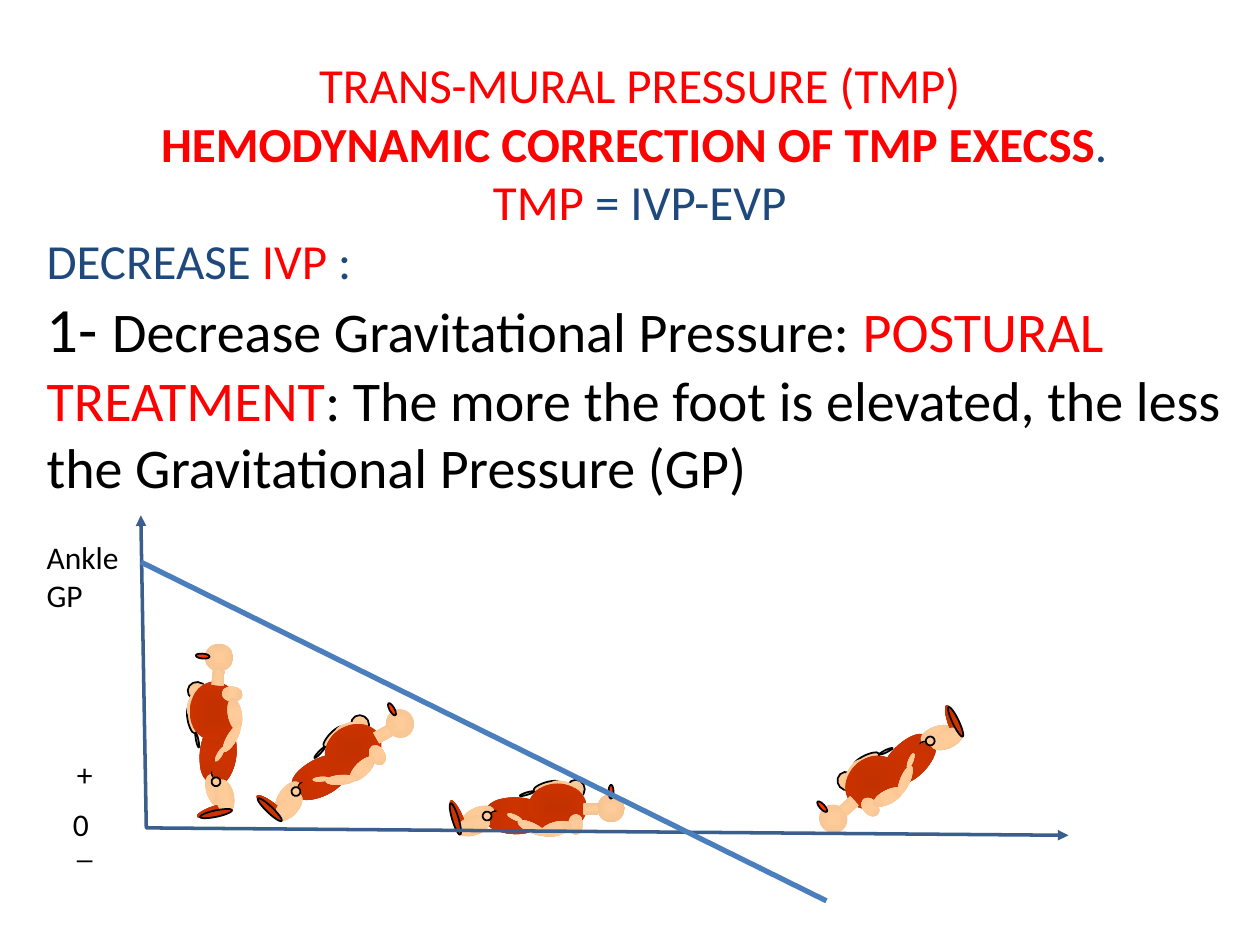
import math

import pptx
import pptx.dml.color
import pptx.enum.shapes
import pptx.enum.text
import pptx.oxml.ns
import pptx.util
from lxml import etree

Cm = pptx.util.Cm
Pt = pptx.util.Pt
RGB = pptx.dml.color.RGBColor
SHAPE = pptx.enum.shapes.MSO_SHAPE
ALIGN = pptx.enum.text.PP_ALIGN
qn = pptx.oxml.ns.qn

RED = RGB(0xFF, 0x00, 0x00)
NAVY = RGB(0x1F, 0x49, 0x7D)
BLACK = RGB(0x00, 0x00, 0x00)
WHITE = RGB(0xFF, 0xFF, 0xFF)
SKIN_DARK = RGB(0xF3, 0xC3, 0x92)
SKIN_LIGHT = RGB(0xFF, 0xCC, 0x99)
SUIT_DARK = RGB(0xC3, 0x31, 0x00)
SUIT_LIGHT = RGB(0xCC, 0x33, 0x00)
LIPS = RGB(0xFF, 0x33, 0x00)
AXIS_BLUE = RGB(0x3A, 0x5F, 0x8C)
TREND_BLUE = RGB(0x4B, 0x7E, 0xBC)
FONT = "Calibri"

# Fills: a plain colour, or (gradient stops, angle); angle None is radial.
SKIN_STOPS = ((0, SKIN_DARK), (50, SKIN_LIGHT), (100, SKIN_DARK))
SUIT_STOPS = ((0, SUIT_DARK), (50, SUIT_LIGHT), (100, SUIT_DARK))
SKIN = (SKIN_STOPS, 90)
SKIN_ACROSS = (SKIN_STOPS, 0)
SUIT = (SUIT_STOPS, 90)
SUIT_ACROSS = (SUIT_STOPS, 0)
HEAD = (((0, SKIN_LIGHT), (100, SKIN_DARK)), None)
TORSO = (((0, SUIT_DARK), (100, SUIT_LIGHT)), None)

# Lying figure, back to front: centre x, y from the torso centre,
# width, height (cm), rotation, fill, outlined
BODY_PARTS = [
    (-0.22, -0.42, 0.56, 0.18, 343, SKIN, True),
    (-0.62, -0.28, 0.30, 0.05, 343, SKIN, True),
    (0.37, -0.37, 0.36, 0.38, 0, SKIN_ACROSS, True),
    (0.18, -0.37, 0.28, 0.69, 109, SKIN, False),
    (-0.88, 0, 0.41, 1.07, 89, SUIT, False),
    (-1.61, 0.18, 0.36, 0.71, 66, SKIN, False),
    (-2.01, 0.17, 0.69, 0.18, 66, SUIT, False),
    (-1.30, 0.17, 0.13, 0.23, 38, WHITE, True),
    (1.08, 0.01, 0.56, 0.58, 0, HEAD, False),
    (0, 0, 1.19, 0.97, 0, TORSO, False),
    (0.67, 0.03, 0.30, 0.25, 0, SKIN, False),
    (-0.93, 0.30, 0.46, 1.07, 96, SUIT, False),
    (-1.70, 0.37, 0.69, 0.38, 343, SKIN, False),
    (-2.06, 0.23, 0.13, 0.66, 343, SUIT_ACROSS, True),
    (-1.42, 0.17, 0.18, 0.18, 343, SKIN, True),
    (0.37, 0.34, 0.30, 0.43, 0, SKIN, False),
    (-0.03, 0.43, 0.28, 0.66, 75, SKIN, False),
    (-0.52, 0.41, 0.61, 0.20, 25, SKIN, False),
    (-0.86, 0.20, 0.33, 0.10, 25, SKIN, False),
    (1.08, -0.32, 0.10, 0.28, 0, LIPS, True),
]
NECK = 10
UNFLIPPED_THIGHS = (4, 11)

# Torso centre x, y (cm), turn in degrees, facing left
POSES = [
    (11.24, 16.28, 0, False),
    (7.12, 15.11, -29.5, False),
    (4.31, 14.33, -84.9, False),
    (17.59, 15.77, -42.4, True),
]

HEADING = [
    (ALIGN.CENTER, [("TRANS-MURAL PRESSURE (TMP)", 28, RED, False)]),
    (ALIGN.CENTER, [("HEMODYNAMIC CORRECTION OF TMP EXECSS", 28, RED, True),
                    (". ", 28, NAVY, False)]),
    (ALIGN.CENTER, [("TMP ", 28, RED, False), ("= IVP-EVP", 28, NAVY, False)]),
    (ALIGN.LEFT, [("DECREASE ", 28, NAVY, False), ("IVP", 28, RED, False),
                  (" :", 28, NAVY, False)]),
    (ALIGN.LEFT, [("1- ", 36, BLACK, False),
                  ("Decrease Gravitational Pressure: ", 32, BLACK, False),
                  ("POSTURAL TREATMENT", 32, RED, False),
                  (": The more the foot is elevated, the less the "
                   "Gravitational Pressure (GP)", 32, BLACK, False)]),
]


def add_text(slide, x, y, w, h, paragraphs):
    """Each paragraph is (alignment, [(text, size, colour, bold), ...])."""
    tf = slide.shapes.add_textbox(Cm(x), Cm(y), Cm(w), Cm(h)).text_frame
    tf.word_wrap = True
    tf.auto_size = pptx.enum.text.MSO_AUTO_SIZE.SHAPE_TO_FIT_TEXT
    for i, (alignment, runs) in enumerate(paragraphs):
        p = tf.add_paragraph() if i else tf.paragraphs[0]
        p.alignment = alignment
        for text, size, color, bold in runs:
            r = p.add_run()
            r.text = text
            r.font.name = FONT
            r.font.size = Pt(size)
            r.font.bold = bold
            r.font.color.rgb = color


def set_gradient(sp, stops, angle):
    sp.fill.gradient()
    grad = sp._element.spPr.find(qn("a:gradFill"))
    for child in list(grad):
        grad.remove(child)
    gs_list = etree.SubElement(grad, qn("a:gsLst"))
    for position, color in stops:
        gs = etree.SubElement(gs_list, qn("a:gs"), pos=str(position * 1000))
        etree.SubElement(gs, qn("a:srgbClr"), val=str(color))
    if angle is None:
        radial = etree.SubElement(grad, qn("a:path"), path="shape")
        etree.SubElement(radial, qn("a:fillToRect"),
                         dict.fromkeys("ltrb", "50000"))
    else:
        etree.SubElement(grad, qn("a:lin"), ang=str(angle * 60000), scaled="1")


def add_figure(slide, x, y, turn, faces_left):
    """Draw the body turned about its torso centre, mirrored if it faces left."""
    group = slide.shapes.add_group_shape()
    side = -1 if faces_left else 1
    cos, sin = math.cos(math.radians(turn)), math.sin(math.radians(turn))
    for i, (dx, dy, w, h, rotation, fill, outlined) in enumerate(BODY_PARTS):
        dx *= side
        cx, cy = x + dx * cos - dy * sin, y + dx * sin + dy * cos
        kind = SHAPE.RECTANGLE if i == NECK else SHAPE.OVAL
        sp = group.shapes.add_shape(kind, Cm(cx - w / 2), Cm(cy - h / 2),
                                    Cm(w), Cm(h))
        sp.shadow.inherit = False
        sp.rotation = (side * rotation + turn) % 360
        if (i in UNFLIPPED_THIGHS) == faces_left:
            sp._element.spPr.xfrm.set("flipH", "1")
        if isinstance(fill, RGB):
            sp.fill.solid()
            sp.fill.fore_color.rgb = fill
        else:
            set_gradient(sp, *fill)
        if outlined:
            sp.line.color.rgb = BLACK
            sp.line.width = Pt(1)
        else:
            sp.line.fill.background()


def add_graph(slide, x, y):
    """Axes and falling pressure line, from the top of the vertical axis."""
    builder = slide.shapes.build_freeform(Cm(x), Cm(y))
    builder.add_line_segments([(Cm(x + 0.11), Cm(y + 6.3)),
                               (Cm(x + 18.7), Cm(y + 6.45))], close=False)
    axes = builder.convert_to_shape()
    axes.shadow.inherit = False
    axes.fill.background()
    axes.line.color.rgb = AXIS_BLUE
    axes.line.width = Pt(2)
    ln = axes.line._get_or_add_ln()
    for end in ("a:headEnd", "a:tailEnd"):
        etree.SubElement(ln, qn(end), type="triangle")

    trend = slide.shapes.add_connector(
        pptx.enum.shapes.MSO_CONNECTOR.STRAIGHT,
        Cm(x), Cm(y + 0.94), Cm(x + 13.82), Cm(y + 7.77))
    trend.line.color.rgb = TREND_BLUE
    trend.line.width = Pt(3)
    etree.SubElement(trend._element.spPr, qn("a:effectLst"))


def add_axis_labels(slide, x, y):
    for text, dx, dy, w, h in [("Ankle GP", 0, 0, 2.13, 1.8),
                               ("0", 0.53, 5.38, 1.63, 1.02),
                               ("_", 0.61, 5.82, 1.63, 1.02),
                               ("+", 0.61, 4.37, 1.63, 1.02)]:
        add_text(slide, x + dx, y + dy, w, h,
                 [(ALIGN.LEFT, [(text, 18, BLACK, False)])])


def main():
    prs = pptx.Presentation()
    prs.slide_width, prs.slide_height = Cm(25.4), Cm(19.05)
    slide = prs.slides.add_slide(prs.slide_layouts[6])
    add_text(slide, 0.69, 0.97, 24.41, 9.32, HEADING)
    for pose in POSES:
        add_figure(slide, *pose)
    add_graph(slide, 2.84, 10.39)
    add_axis_labels(slide, 0.69, 10.72)
    prs.save("out.pptx")


if __name__ == "__main__":
    main()
